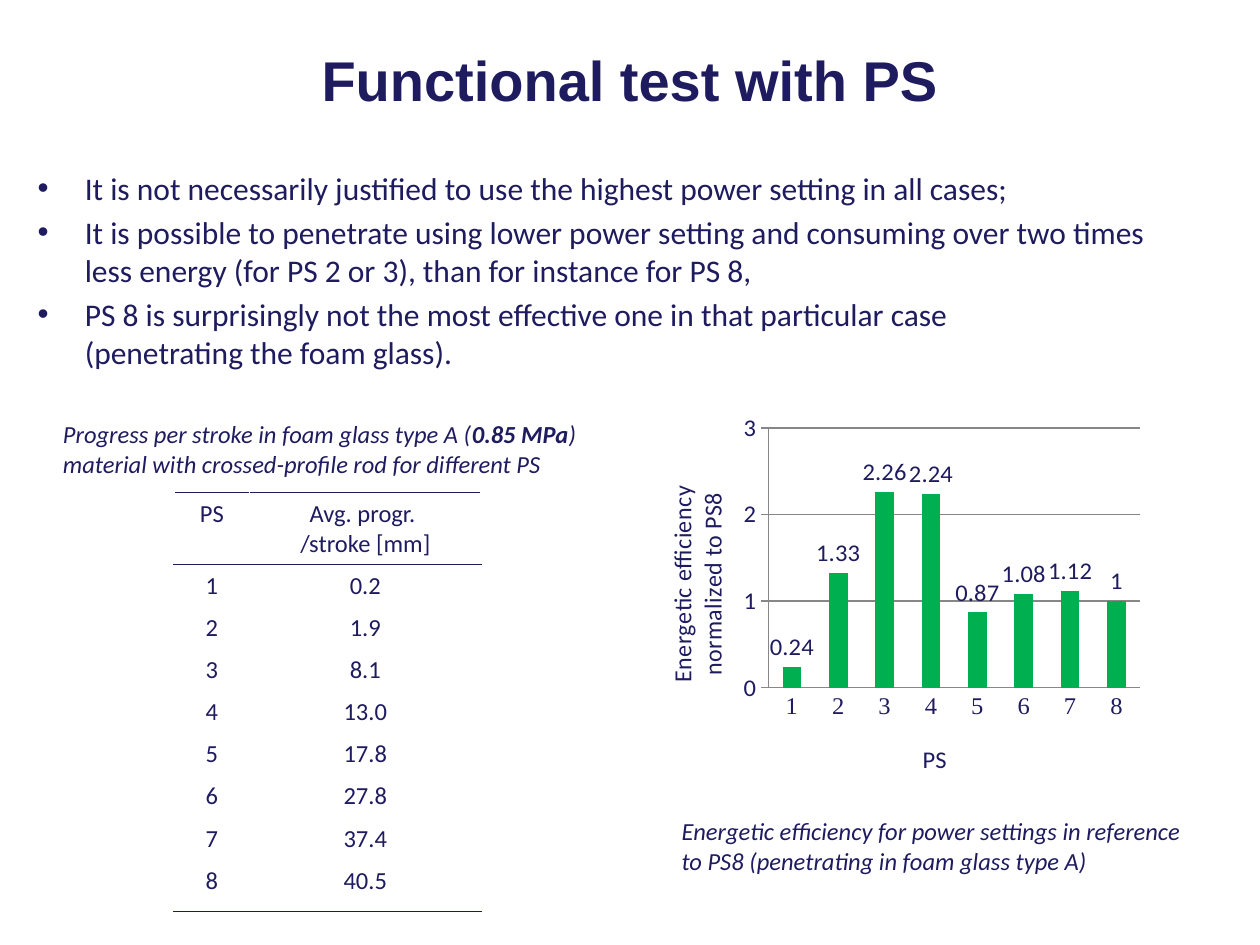
"""Build the slide on functional tests with power settings (PS)."""
import lxml.etree
import pptx
import pptx.chart.data
import pptx.dml.color
import pptx.enum.chart
import pptx.enum.text
import pptx.oxml
import pptx.oxml.ns
import pptx.util

Cm = pptx.util.Cm
Pt = pptx.util.Pt
qn = pptx.oxml.ns.qn
ALIGN = pptx.enum.text.PP_ALIGN
NAVY = pptx.dml.color.RGBColor(0x1E, 0x1B, 0x5F)
GREEN = pptx.dml.color.RGBColor(0x00, 0xB0, 0x50)
GREY = pptx.dml.color.RGBColor(0x87, 0x87, 0x87)
WHITE = pptx.dml.color.RGBColor(0xFF, 0xFF, 0xFF)

FINDINGS = [
    "It is not necessarily justified to use the highest power setting in all cases;",
    "It is possible to penetrate using lower power setting and consuming over two times "
    "less energy (for PS 2 or 3), than for instance for PS 8,",
    "PS 8 is surprisingly not the most effective one in that particular case \n"
    "(penetrating the foam glass).",
]
SETTINGS = [str(number) for number in range(1, 9)]
PROGRESS = ["0.2", "1.9", "8.1", "13.0", "17.8", "27.8", "37.4", "40.5"]
EFFICIENCY = [0.24, 1.33, 2.26, 2.24, 0.87, 1.08, 1.12, 1]


def style_font(font, size=14, name="Calibri", bold=False, italic=False):
    font.size, font.name = Pt(size), name
    font.bold, font.italic = bold, italic
    font.color.rgb = NAVY


def add_run(paragraph, text, **style):
    run = paragraph.add_run()
    run.text = text
    style_font(run.font, **style)


def add_text_frame(slide, left, top, width, height):
    frame = slide.shapes.add_textbox(Cm(left), Cm(top), Cm(width), Cm(height)).text_frame
    frame.word_wrap = True
    return frame


def add_title(slide, text):
    frame = add_text_frame(slide, 0, 0, 25.4, 3.18)
    frame.vertical_anchor = pptx.enum.text.MSO_ANCHOR.MIDDLE
    frame.paragraphs[0].alignment = ALIGN.CENTER
    add_run(frame.paragraphs[0], text, size=32, name="Arial", bold=True)


def add_findings(slide, findings):
    frame = add_text_frame(slide, 0.51, 3.28, 23.22, 5.05)
    for index, finding in enumerate(findings):
        paragraph = frame.add_paragraph() if index else frame.paragraphs[0]
        properties = paragraph._p.get_or_add_pPr()
        properties.set("marL", str(Cm(0.95)))
        properties.set("indent", str(Cm(-0.95)))
        lxml.etree.SubElement(properties, qn("a:buFont")).set("typeface", "Arial")
        lxml.etree.SubElement(properties, qn("a:buChar")).set("char", "•")
        if index:
            paragraph.space_before = Pt(3.6)
        for number, line in enumerate(finding.split("\n")):
            if number:
                paragraph.add_line_break()
            add_run(paragraph, line, size=18)


def add_caption(slide, left, top, width, parts):
    frame = add_text_frame(slide, left, top, width, 1.45)
    for text, bold in parts:
        add_run(frame.paragraphs[0], text, bold=bold, italic=True)


def set_borders(cell, top, bottom):
    properties = cell._tc.get_or_add_tcPr()
    sides = [("L", WHITE), ("R", WHITE), ("T", top), ("B", bottom)]
    for position, (side, color) in enumerate(sides):
        line = pptx.oxml.parse_xml(
            f'<a:ln{side} {pptx.oxml.ns.nsdecls("a")} w="{Pt(1)}"><a:solidFill>'
            f'<a:srgbClr val="{color}"/></a:solidFill></a:ln{side}>')
        properties.insert(position, line)


def fill_cell(cell, text, top, bottom):
    cell.fill.solid()
    cell.fill.fore_color.rgb = WHITE
    set_borders(cell, top, bottom)
    for index, line in enumerate(text.split("\n")):
        paragraph = cell.text_frame.add_paragraph() if index else cell.text_frame.paragraphs[0]
        paragraph.alignment = ALIGN.CENTER
        add_run(paragraph, line)


def add_progress_table(slide):
    rows = [("PS", "Avg. progr. \n/stroke [mm]"), *zip(SETTINGS, PROGRESS)]
    last = len(rows) - 1
    heights = [1.45] + [0.85] * (last - 1) + [1.04]
    table = slide.shapes.add_table(
        len(rows), 2, Cm(3.51), Cm(9.93), Cm(6.19), Cm(sum(heights))).table
    table.first_row = table.horz_banding = False
    for column, width in zip(table.columns, (1.52, 4.67)):
        column.width = Cm(width)
    for index, (texts, height) in enumerate(zip(rows, heights)):
        table.rows[index].height = Cm(height)
        top = NAVY if index <= 1 else WHITE
        bottom = NAVY if index in (0, last) else WHITE
        for column, text in enumerate(texts):
            fill_cell(table.cell(index, column), text, top, bottom)


def make_layout(target="", **places):
    inner = f'<c:layoutTarget val="{target}"/>' if target else ""
    modes = "".join(f'<c:{side}Mode val="edge"/>' for side in "xy")
    values = "".join(f'<c:{key} val="{value}"/>' for key, value in places.items())
    return pptx.oxml.parse_xml(
        f'<c:layout {pptx.oxml.ns.nsdecls("c")}><c:manualLayout>'
        f'{inner}{modes}{values}</c:manualLayout></c:layout>')


def drop_layout(element):
    for layout in element.findall(qn("c:layout")):
        element.remove(layout)


def style_axis(axis, title, x, y, font_name):
    axis.has_title = True
    add_run(axis.axis_title.text_frame.paragraphs[0], title)
    heading = axis.axis_title._element
    drop_layout(heading)
    heading.find(qn("c:tx")).addnext(make_layout(x=x, y=y))
    style_font(axis.tick_labels.font, name=font_name)
    axis.format.line.color.rgb = GREY


def add_efficiency_chart(slide):
    data = pptx.chart.data.CategoryChartData()
    data.categories = SETTINGS
    data.add_series("Series 1", EFFICIENCY)
    chart = slide.shapes.add_chart(
        pptx.enum.chart.XL_CHART_TYPE.COLUMN_CLUSTERED,
        Cm(12.9), Cm(8.33), Cm(10.39), Cm(7.44), data).chart
    chart.has_legend = chart.has_title = False
    style_font(chart.font)

    settings, efficiency = chart.category_axis, chart.value_axis
    style_axis(settings, "PS", 0.54, 0.9, "Times New Roman")
    style_axis(efficiency, "Energetic efficiency normalized to PS8", 0.04, 0.2, "Calibri")
    settings.major_tick_mark = pptx.enum.chart.XL_TICK_MARK.NONE
    efficiency.major_tick_mark = pptx.enum.chart.XL_TICK_MARK.OUTSIDE
    efficiency.minimum_scale, efficiency.maximum_scale, efficiency.major_unit = 0, 3, 1
    efficiency.tick_labels.number_format = "0"
    efficiency.tick_labels.number_format_is_linked = False
    efficiency.major_gridlines.format.line.color.rgb = GREY

    plot = chart.plots[0]
    plot.gap_width, plot.overlap, plot.vary_by_categories = 150, -25, False
    bars = plot.series[0]
    bars.format.fill.solid()
    bars.format.fill.fore_color.rgb = GREEN
    labels = bars.data_labels
    labels.show_value = True
    labels.position = pptx.enum.chart.XL_LABEL_POSITION.OUTSIDE_END
    labels.number_format, labels.number_format_is_linked = "General", False
    style_font(labels.font)

    area = chart._chartSpace.chart.plotArea
    drop_layout(area)
    area.insert(0, make_layout("inner", x=0.25, y=0.04, w=0.72, h=0.72))


def main():
    presentation = pptx.Presentation()
    presentation.slide_width, presentation.slide_height = Cm(25.4), Cm(19.05)
    slide = presentation.slides.add_slide(presentation.slide_layouts[6])
    add_title(slide, "Functional test with PS")
    add_findings(slide, FINDINGS)
    add_efficiency_chart(slide)
    add_caption(slide, 1.02, 8.33, 11.68, [
        ("Progress per stroke in foam glass type A (", False),
        ("0.85 MPa", True),
        (") material with crossed-profile rod for different PS", False)])
    add_progress_table(slide)
    add_caption(slide, 13.49, 16.33, 10.8, [
        ("Energetic efficiency for power settings in reference to PS8 "
         "(penetrating in foam glass type A)", False)])
    presentation.save("out.pptx")


if __name__ == "__main__":
    main()
